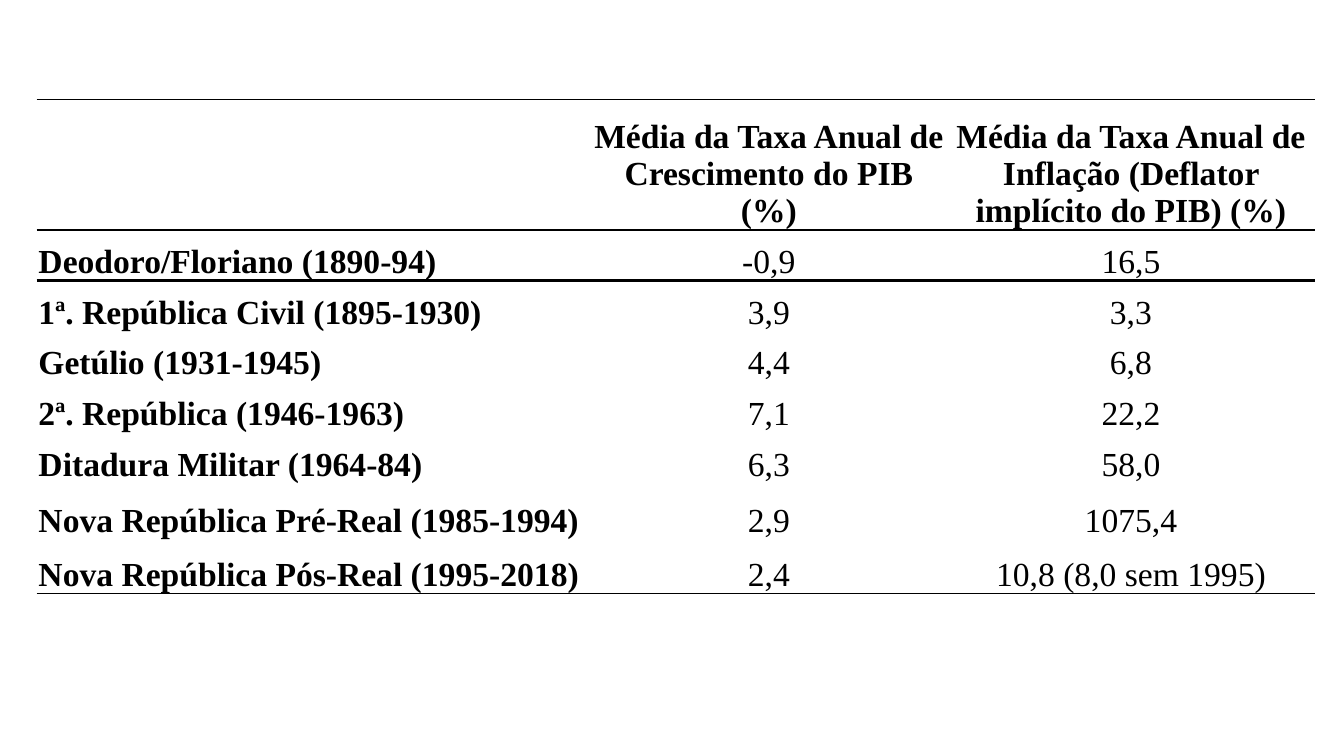
"""Slide with a table of Brazilian GDP growth and inflation by political period."""
from lxml import etree
from pptx import Presentation
from pptx.dml.color import RGBColor
from pptx.enum import text
from pptx.oxml import ns
from pptx.util import Cm, Pt

BLACK = RGBColor(0, 0, 0)
NO_STYLE = "{2D5ABB26-0587-4C30-8999-92F81FD0307C}"

periods = [
    ("", "Média da Taxa Anual de Crescimento do PIB (%)",
     "Média da Taxa Anual de Inflação (Deflator implícito do PIB) (%)"),
    ("Deodoro/Floriano (1890-94)", "-0,9", "16,5"),
    ("1ª. República Civil (1895-1930)", "3,9", "3,3"),
    ("Getúlio (1931-1945)", "4,4", "6,8"),
    ("2ª. República (1946-1963)", "7,1", "22,2"),
    ("Ditadura Militar (1964-84)", "6,3", "58,0"),
    ("Nova República Pré-Real (1985-1994)", "2,9", "1075,4"),
    ("Nova República Pós-Real (1995-2018)", "2,4", "10,8 (8,0 sem 1995)"),
    ("", "", ""),
]
column_widths = [13.97, 8.97, 9.28]
row_heights = [3.28] + [1.28] * 5 + [1.42, 1.35, 1.28]
rules = {0: {"lnT": 0.5, "lnB": 2}, 1: {"lnT": 2}, 7: {"lnB": 1}, 8: {"lnT": 1}}


def add_rule(cell, side, points):
    properties = cell._tc.get_or_add_tcPr()
    line = etree.SubElement(properties, ns.qn("a:" + side), w=str(Pt(points)))
    fill = etree.SubElement(line, ns.qn("a:solidFill"))
    etree.SubElement(fill, ns.qn("a:srgbClr"), val=str(BLACK))


deck = Presentation()
deck.slide_width, deck.slide_height = Cm(33.87), Cm(19.05)
slide = deck.slides.add_slide(deck.slide_layouts[6])

growth_table = slide.shapes.add_table(
    len(periods), len(column_widths), Cm(0.92), Cm(2.51),
    Cm(sum(column_widths)), Cm(sum(row_heights))).table
growth_table.first_row = False
growth_table.horz_banding = False
growth_table._tbl.tblPr.find(ns.qn("a:tableStyleId")).text = NO_STYLE

for column, width in zip(growth_table.columns, column_widths):
    column.width = Cm(width)

for row_index, (period, height) in enumerate(zip(periods, row_heights)):
    growth_table.rows[row_index].height = Cm(height)
    for column_index, content in enumerate(period):
        cell = growth_table.cell(row_index, column_index)
        cell.margin_left = cell.margin_right = cell.margin_top = Cm(0.05)
        cell.margin_bottom = 0
        cell.vertical_anchor = text.MSO_ANCHOR.BOTTOM
        for side, points in rules.get(row_index, {}).items():
            add_rule(cell, side, points)
        cell.fill.background()
        if not content:
            continue
        cell.text_frame.text = content
        paragraph = cell.text_frame.paragraphs[0]
        paragraph.alignment = text.PP_ALIGN.CENTER if column_index else text.PP_ALIGN.LEFT
        font = paragraph.runs[0].font
        font.name, font.size = "Times New Roman", Pt(24)
        font.bold = row_index == 0 or column_index == 0
        font.color.rgb = BLACK

deck.save("out.pptx")
